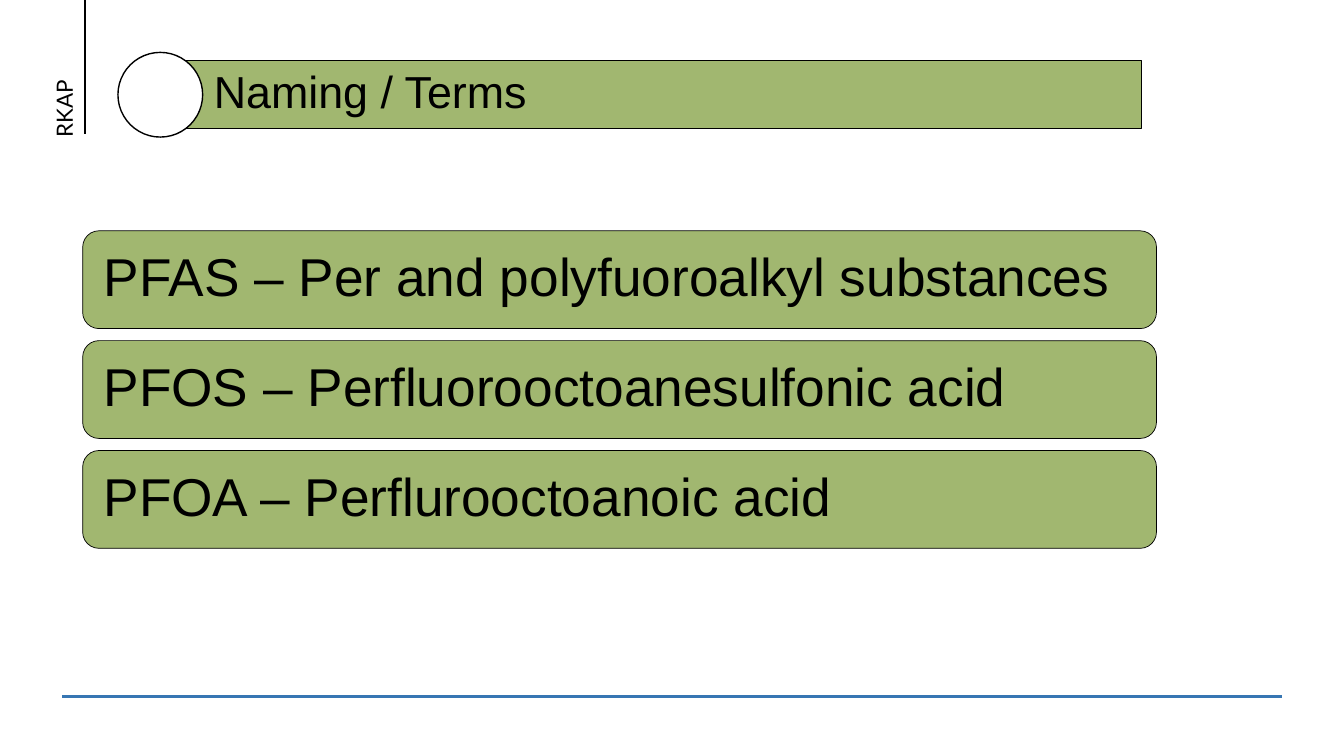
from dataclasses import dataclass

from lxml import etree
from pptx import Presentation
from pptx import util as u
from pptx.dml.color import RGBColor
from pptx.enum import shapes, text
from pptx.oxml.ns import qn

EMU_PER_PX = 9144  # 100 px to the inch
GREEN = RGBColor(0xA1, 0xB7, 0x70)
BLUE = RGBColor(0x37, 0x76, 0xB3)
BLACK = RGBColor(0, 0, 0)
WHITE = RGBColor(255, 255, 255)

TERM_TOP, TERM_PITCH = 229, 109
TERMS = (
    "PFAS – Per and polyfuoroalkyl substances",
    "PFOS – Perfluorooctoanesulfonic acid",
    "PFOA – Perflurooctoanoic acid",
)


@dataclass(frozen=True)
class Rule:
    start: tuple[int, int]
    end: tuple[int, int]
    color: RGBColor


RULES = (
    Rule((62, 691), (1272, 691), BLUE),
    Rule((84, 0), (84, 133), BLACK),
)


def px(value: int) -> u.Emu:
    return u.Emu(value * EMU_PER_PX)


def draw_rule(slide, rule: Rule) -> None:
    connector = slide.shapes.add_connector(
        shapes.MSO_CONNECTOR.STRAIGHT, *map(px, rule.start + rule.end))
    connector.line.color.rgb = rule.color
    connector.line.width = u.Pt(1.5)
    etree.SubElement(connector._element.spPr, qn("a:effectLst"))


def paint(shape, fill: RGBColor, line_width: float) -> None:
    shape.fill.solid()
    shape.fill.fore_color.rgb = fill
    shape.line.color.rgb = BLACK
    shape.line.width = u.Pt(line_width)


def write(shape, content: str, *, size: int, font: str = "Arial", inset: int,
          left: int | None = None, spacing: float = 0.9,
          anchor=text.MSO_ANCHOR.MIDDLE) -> None:
    frame = shape.text_frame
    frame.word_wrap = True
    frame.auto_size = text.MSO_AUTO_SIZE.NONE
    frame.vertical_anchor = anchor
    frame.margin_left = px(inset if left is None else left)
    frame.margin_top = frame.margin_right = frame.margin_bottom = px(inset)
    paragraph = frame.paragraphs[0]
    paragraph.text = content
    paragraph.alignment = text.PP_ALIGN.LEFT
    paragraph.line_spacing = spacing
    paragraph.font.name = font
    paragraph.font.size = u.Pt(size)
    paragraph.font.color.rgb = BLACK


def add_shape(slide, kind, box: tuple[int, int, int, int], fill: RGBColor,
              line_width: float):
    shape = slide.shapes.add_shape(kind, *map(px, box))
    shape.shadow.inherit = False
    paint(shape, fill, line_width)
    return shape


def main() -> None:
    presentation = Presentation()
    presentation.slide_width, presentation.slide_height = px(1333), px(750)
    slide = presentation.slides.add_slide(presentation.slide_layouts[5])

    # Title bar with its circle
    title = slide.shapes.title
    title.left, title.top, title.width, title.height = map(px, (159, 60, 973, 67))
    paint(title, GREEN, 0.5)
    write(title, "Naming / Terms", size=32, inset=9, left=53)
    add_shape(slide, shapes.MSO_SHAPE.OVAL, (117, 52, 84, 84), WHITE, 1)

    # Rules and the upright label
    for rule in RULES:
        draw_rule(slide, rule)
    label = slide.shapes.add_textbox(*map(px, (4, 62, 120, 54)))
    label.rotation = 270
    write(label, "RKAP", size=16, font="Lato", inset=13, spacing=1.0,
          anchor=text.MSO_ANCHOR.TOP)

    # Terms
    for index, term in enumerate(TERMS):
        box = (82, TERM_TOP + index * TERM_PITCH, 1065, 97)
        card = add_shape(slide, shapes.MSO_SHAPE.ROUNDED_RECTANGLE, box, GREEN, 0.5)
        write(card, term, size=38, inset=16)

    presentation.save("out.pptx")


if __name__ == "__main__":
    main()
